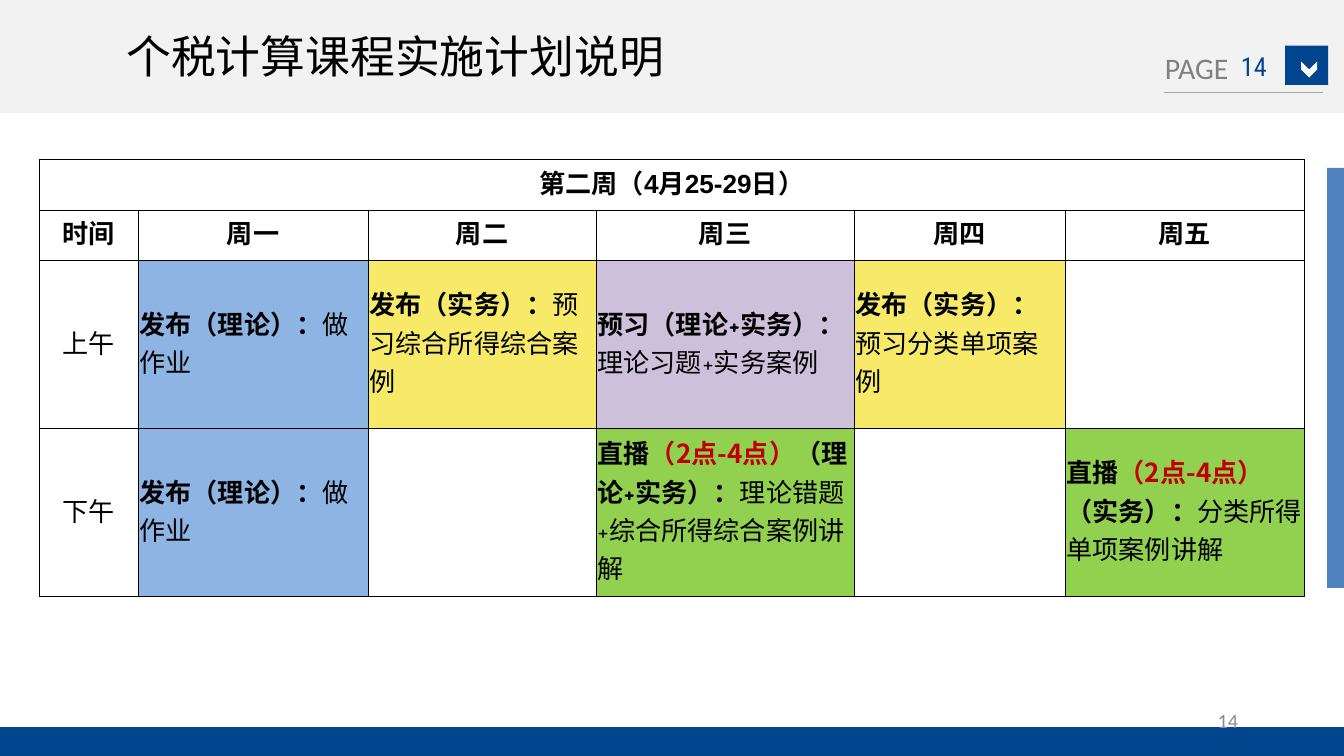
from typing import NamedTuple

from lxml import etree
from pptx import Presentation
from pptx.dml.color import RGBColor
from pptx.enum import shapes, text
from pptx.oxml import ns
from pptx.util import Pt

CJK = "Noto Sans CJK SC"
NAVY, BLACK, RED = "01458E", "000000", "C00000"
BLUE, YELLOW, PURPLE, GREEN = "8DB4E2", "F7EA68", "CCC0DA", "92D050"
LEFT, CENTER, RIGHT = text.PP_ALIGN.LEFT, text.PP_ALIGN.CENTER, text.PP_ALIGN.RIGHT
TOP, MIDDLE = text.MSO_ANCHOR.TOP, text.MSO_ANCHOR.MIDDLE


class Box(NamedTuple):
    left: float
    top: float
    width: float
    height: float


class Block(NamedTuple):
    box: Box
    fill: str
    kind: shapes.MSO_SHAPE = shapes.MSO_SHAPE.RECTANGLE
    rotation: int = 0


class Label(NamedTuple):
    box: Box
    text: str
    size: float
    font: str
    color: str
    align: text.PP_ALIGN
    anchor: text.MSO_ANCHOR
    wrap: bool = True


class Phrase(NamedTuple):
    text: str
    bold: bool = False
    color: str = BLACK
    font: str = CJK


class Entry(NamedTuple):
    phrases: list[Phrase]
    fill: str = ""
    align: text.PP_ALIGN = LEFT


def rgb(value: str) -> RGBColor:
    return RGBColor.from_string(value)


def emu(box: Box) -> list[int]:
    return [Pt(v) for v in box]


def format_run(r, size: float, font: str, color: str, bold: bool = False) -> None:
    r.font.size, r.font.name, r.font.bold = Pt(size), font, bold
    r.font.color.rgb = rgb(color)
    etree.SubElement(r._r.get_or_add_rPr(), ns.qn("a:ea"), typeface=CJK)


def add_block(slide, block: Block) -> None:
    sp = slide.shapes.add_shape(block.kind, *emu(block.box))
    sp.rotation = block.rotation
    sp.shadow.inherit = False
    sp.fill.solid()
    sp.fill.fore_color.rgb = rgb(block.fill)
    sp.line.fill.background()


def fill_label(sp, label: Label) -> None:
    tf = sp.text_frame
    tf.text = label.text
    tf.word_wrap, tf.vertical_anchor = label.wrap, label.anchor
    tf.auto_size = text.MSO_AUTO_SIZE.NONE
    p = tf.paragraphs[0]
    p.alignment = label.align
    format_run(p.runs[0], label.size, label.font, label.color)


def add_rule(slide, x1: float, x2: float, y: float, color: str) -> None:
    line = slide.shapes.add_connector(
        shapes.MSO_CONNECTOR.STRAIGHT, Pt(x1), Pt(y), Pt(x2), Pt(y))
    line.line.color.rgb = rgb(color)
    line.line.width = Pt(0.75)
    etree.SubElement(line._element.spPr, ns.qn("a:effectLst"))


def border_cell(cell, color: str, width: float) -> None:
    tc_pr = cell._tc.get_or_add_tcPr()
    for side in ("lnL", "lnR", "lnT", "lnB"):
        ln = etree.SubElement(tc_pr, ns.qn(f"a:{side}"), w=str(Pt(width)))
        solid = etree.SubElement(ln, ns.qn("a:solidFill"))
        etree.SubElement(solid, ns.qn("a:srgbClr"), val=color)


def fill_cell(cell, entry: Entry) -> None:
    border_cell(cell, BLACK, 0.5)
    if entry.fill:
        cell.fill.solid()
        cell.fill.fore_color.rgb = rgb(entry.fill)
    else:
        cell.fill.background()
    cell.vertical_anchor = MIDDLE
    cell.margin_left = cell.margin_right = cell.margin_top = Pt(0.72)
    cell.margin_bottom = Pt(3.6)
    p = cell.text_frame.paragraphs[0]
    p.alignment = entry.align
    for phrase in entry.phrases:
        r = p.add_run()
        r.text = phrase.text
        format_run(r, 14, phrase.font, phrase.color, phrase.bold)


def add_schedule(slide, left: float, top: float, cols: list[float],
                 rows: list[float], entries: list[list[Entry]]) -> None:
    box = Box(left, top, sum(cols), sum(rows))
    table = slide.shapes.add_table(len(rows), len(cols), *emu(box)).table
    table.first_row = table.horz_banding = False
    for column, width in zip(table.columns, cols):
        column.width = Pt(width)
    for row, height, row_entries in zip(table.rows, rows, entries):
        row.height = Pt(height)
        for cell, entry in zip(row.cells, row_entries):
            fill_cell(cell, entry)
    table.cell(0, 0).merge(table.cell(0, len(cols) - 1))


def heading(words: str, bold: bool = True, font: str = CJK) -> Entry:
    return Entry([Phrase(words, bold, font=font)], align=CENTER)


def task(lead: str, detail: str, fill: str) -> Entry:
    return Entry([Phrase(lead, True), Phrase(detail)], fill)


def plus(before: str, after: str, bold: bool = False) -> list[Phrase]:
    return [Phrase(before, bold), Phrase("+", bold, font="Comic Neue"), Phrase(after, bold)]


EMPTY = Entry([])
THEORY = task("发布（理论）：", "做作业", BLUE)
LIVE = [Phrase("直播", True), Phrase("（2点-4点）", True, RED)]
BOTH = plus("（理论", "实务）：", True)
SCHEDULE = [
    [heading("第二周（4月25-29日）", font="Arial")] + [EMPTY] * 5,
    [heading(day) for day in ("时间", "周一", "周二", "周三", "周四", "周五")],
    [heading("上午", False), THEORY,
     task("发布（实务）：", "预习综合所得综合案例", YELLOW),
     Entry(plus("预习（理论", "实务）：", True) + plus("理论习题", "实务案例"), PURPLE),
     task("发布（实务）：", "预习分类单项案例", YELLOW), EMPTY],
    [heading("下午", False), THEORY, EMPTY,
     Entry(LIVE + BOTH + plus("理论错题", "综合所得综合案例讲解"), GREEN), EMPTY,
     Entry(LIVE + [Phrase("（实务）：", True), Phrase("分类所得单项案例讲解")], GREEN)],
]
BLOCKS = [
    Block(Box(0, 0, 720, 60.5), "F2F2F2"),
    Block(Box(0, 389.5, 720, 15.5), NAVY),
    Block(Box(688.5, 24.5, 23, 21), NAVY),
    Block(Box(697, 33, 8.6, 8.6), "FFFFFF", shapes.MSO_SHAPE.CHEVRON, 90),
    Block(Box(711, 90, 9, 225), "4F81BD"),
]
TITLE = Label(Box(60.5, 11.5, 418, 36), "个税计算课程实施计划说明", 24, "Arial", BLACK, LEFT, TOP)
LABELS = [
    Label(Box(617, 23, 49, 26.6), "PAGE", 16, "Calibri", "808080", LEFT, TOP, False),
    Label(Box(654.5, 24.5, 34.5, 21.6), "14", 14, "Roboto Condensed", NAVY, CENTER, MIDDLE),
    Label(Box(508.3, 375, 162, 21.6), "14", 10.8, "Calibri", "8C8C8C", RIGHT, MIDDLE),
]


def main() -> None:
    prs = Presentation()
    prs.slide_width, prs.slide_height = Pt(720), Pt(405)
    slide = prs.slides.add_slide(prs.slide_layouts[5])
    title = slide.shapes.title
    for block in BLOCKS:
        add_block(slide, block)
    add_rule(slide, 623.5, 708.5, 49.7, "A6A6A6")
    for label in LABELS:
        fill_label(slide.shapes.add_textbox(*emu(label.box)), label)
    title.left, title.top, title.width, title.height = emu(TITLE.box)
    fill_label(title, TITLE)
    slide.shapes._spTree.append(title._element)  # in front of the header band
    add_schedule(slide, 21, 85.5, [53, 123.2, 122.2, 138.2, 113, 128.2],
                 [27, 27, 90, 90], SCHEDULE)
    prs.save("out.pptx")


if __name__ == "__main__":
    main()
